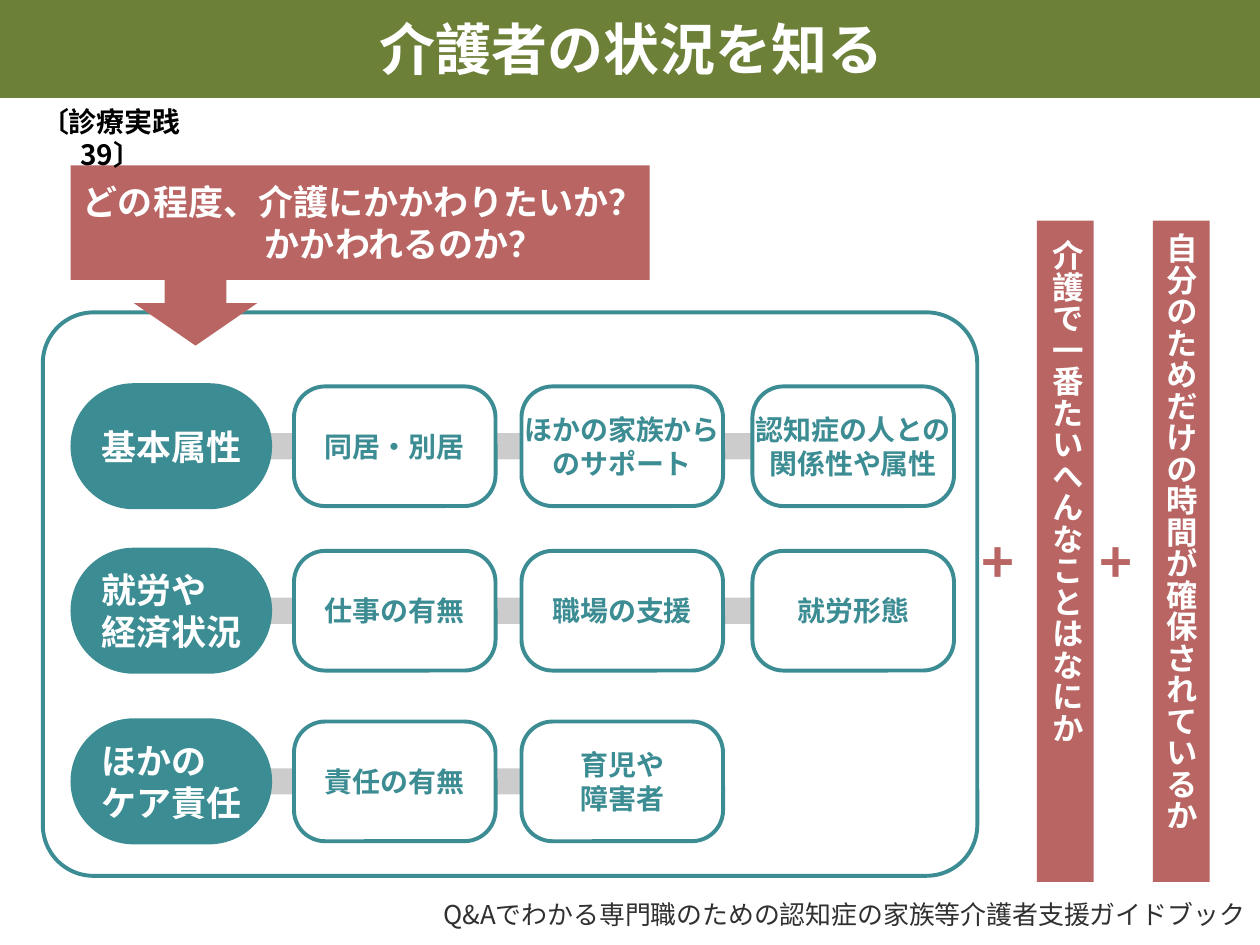
from lxml.etree import SubElement
from pptx import Presentation
from pptx.dml.color import RGBColor
from pptx.enum.shapes import MSO_SHAPE as Shape
from pptx.enum.text import MSO_ANCHOR as Anchor, PP_ALIGN as Align
from pptx.oxml.ns import qn
from pptx.util import Pt


class Theme:
    font = "Noto Sans CJK JP"
    green, red, teal = "6D8038", "B96563", "3C8C93"
    rail, white, black, footer = "CCCCCC", "FFFFFF", "000000", "303030"
    title_size, lead_size, side_size, box_size, footer_size = 32, 20, 18, 16, 14.8
    outline = 2.25


def add_block(kind, left, top, width, height, fill=None, line=None, radius=None):
    """Add a flat preset shape; lengths are in points."""
    block = page.shapes.add_shape(kind, Pt(left), Pt(top), Pt(width), Pt(height))
    block.shadow.inherit = False
    if radius is not None:
        block.adjustments[0] = radius
    if fill:
        block.fill.solid()
        block.fill.fore_color.rgb = RGBColor.from_string(fill)
    else:
        block.fill.background()
    if line:
        block.line.color.rgb = RGBColor.from_string(line)
        block.line.width = Pt(Theme.outline)
    else:
        block.line.fill.background()
    return block


def write(box, lines, size, color, align=Align.LEFT, bold=True, wrap=False,
          anchor=Anchor.MIDDLE):
    """Fill a shape with one paragraph per line."""
    frame = box.text_frame
    frame.word_wrap = wrap
    frame.vertical_anchor = anchor
    for index, line in enumerate(lines):
        para = frame.add_paragraph() if index else frame.paragraphs[0]
        para.alignment = align
        span = para.add_run()
        span.text = line
        span.font.name = Theme.font
        span.font.size = Pt(size)
        span.font.bold = bold
        span.font.color.rgb = RGBColor.from_string(color)
        SubElement(span.font._element, qn("a:ea"), typeface=Theme.font)


deck = Presentation()
deck.slide_width, deck.slide_height = Pt(720), Pt(540)
page = deck.slides.add_slide(deck.slide_layouts[5])

# Title on its banner
banner = add_block(Shape.RECTANGLE, 0, 0, 720, 56, Theme.green)
title = page.shapes.title
title.left, title.top, title.width, title.height = Pt(31), Pt(2), Pt(660), Pt(50.5)
write(title, ["介護者の状況を知る"], Theme.title_size, Theme.white, Align.CENTER, wrap=True)
banner.element.addnext(title.element)

# Rows of the grid: pill top, pill lines, lines of each box
rows = [
    (219, ["基本属性"],
     [["同居・別居"], ["ほかの家族から", "のサポート"], ["認知症の人との", "関係性や属性"]]),
    (313, ["就労や", "経済状況"], [["仕事の有無"], ["職場の支援"], ["就労形態"]]),
    (410.5, ["ほかの", "ケア責任"], [["責任の有無"], ["育児や", "障害者"]]),
]
columns = [168, 298, 430]
cell_width, pill_height, box_height, rail_height = 115.2, 72, 68.4, 15
pill_left = 40.3

for pill_top, heading, boxes in rows:
    middle = pill_top + pill_height / 2
    # Grey rail from the pill to the last box
    rail_left = pill_left + cell_width / 2
    add_block(Shape.RECTANGLE, rail_left, middle - rail_height / 2,
              columns[len(boxes) - 1] + cell_width / 2 - rail_left, rail_height, Theme.rail)
    pill = add_block(Shape.ROUNDED_RECTANGLE, pill_left, pill_top, cell_width, pill_height,
                     Theme.teal, radius=0.5)
    write(pill, heading, Theme.lead_size, Theme.white)
    for left, lines in zip(columns, boxes):
        box = add_block(Shape.ROUNDED_RECTANGLE, left, middle - box_height / 2, cell_width,
                        box_height, Theme.white, Theme.teal, 0.26)
        write(box, lines, Theme.box_size, Theme.teal, Align.CENTER)

# Frame around the grid
add_block(Shape.ROUNDED_RECTANGLE, 24.5, 178.5, 534, 322, line=Theme.teal, radius=0.09)

# Lead question with its arrow
question = add_block(Shape.RECTANGLE, pill_left, 94.5, 331, 65.5, Theme.red)
write(question, ["どの程度、介護にかかわりたいか？", "かかわれるのか？"],
      Theme.lead_size, Theme.white)
second_line = question.text_frame.paragraphs[1]
second_line._p.get_or_add_pPr().set("marL", str(Pt(104)))
add_block(Shape.DOWN_ARROW, 76.5, 149, 70.5, 48.5, Theme.red)

# Vertical side bars, each with a plus sign before it
side_bars = [
    (592.5, 553.7, " 介護で一番たいへんなことはなにか"),
    (658.8, 621.4, "自分のためだけの時間が確保されているか"),
]
for bar_left, plus_left, text in side_bars:
    bar = add_block(Shape.RECTANGLE, bar_left, 126, 32.4, 378, Theme.red)
    write(bar, [text], Theme.side_size, Theme.white, Align.CENTER)
    bar.text_frame._txBody.bodyPr.set("vert", "eaVert")
    plus = page.shapes.add_textbox(Pt(plus_left), Pt(301), Pt(44.6), Pt(39.6))
    write(plus, ["+"], Theme.title_size, Theme.red)

# Section tag and book title
tag = page.shapes.add_textbox(Pt(0), Pt(56), Pt(126.7), Pt(26.6))
write(tag, ["〔診療実践 39〕"], Theme.box_size, Theme.black, Align.CENTER,
      wrap=True, anchor=Anchor.TOP)
footer = page.shapes.add_textbox(Pt(156), Pt(510), Pt(562.5), Pt(25))
write(footer, ["Q&Aでわかる専門職のための認知症の家族等介護者支援ガイドブック"],
      Theme.footer_size, Theme.footer, Align.RIGHT, bold=False, wrap=True, anchor=Anchor.TOP)

deck.save("out.pptx")
